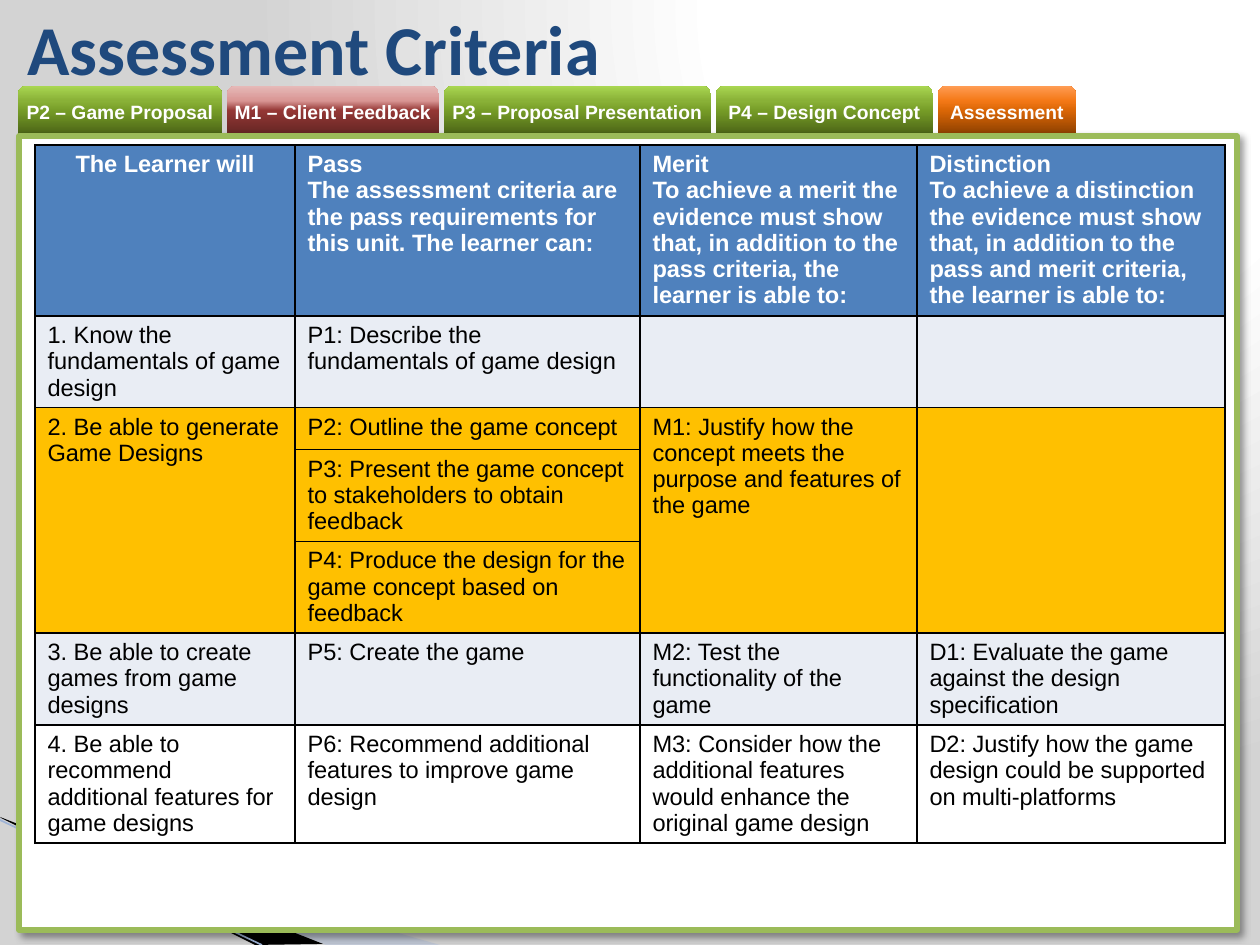
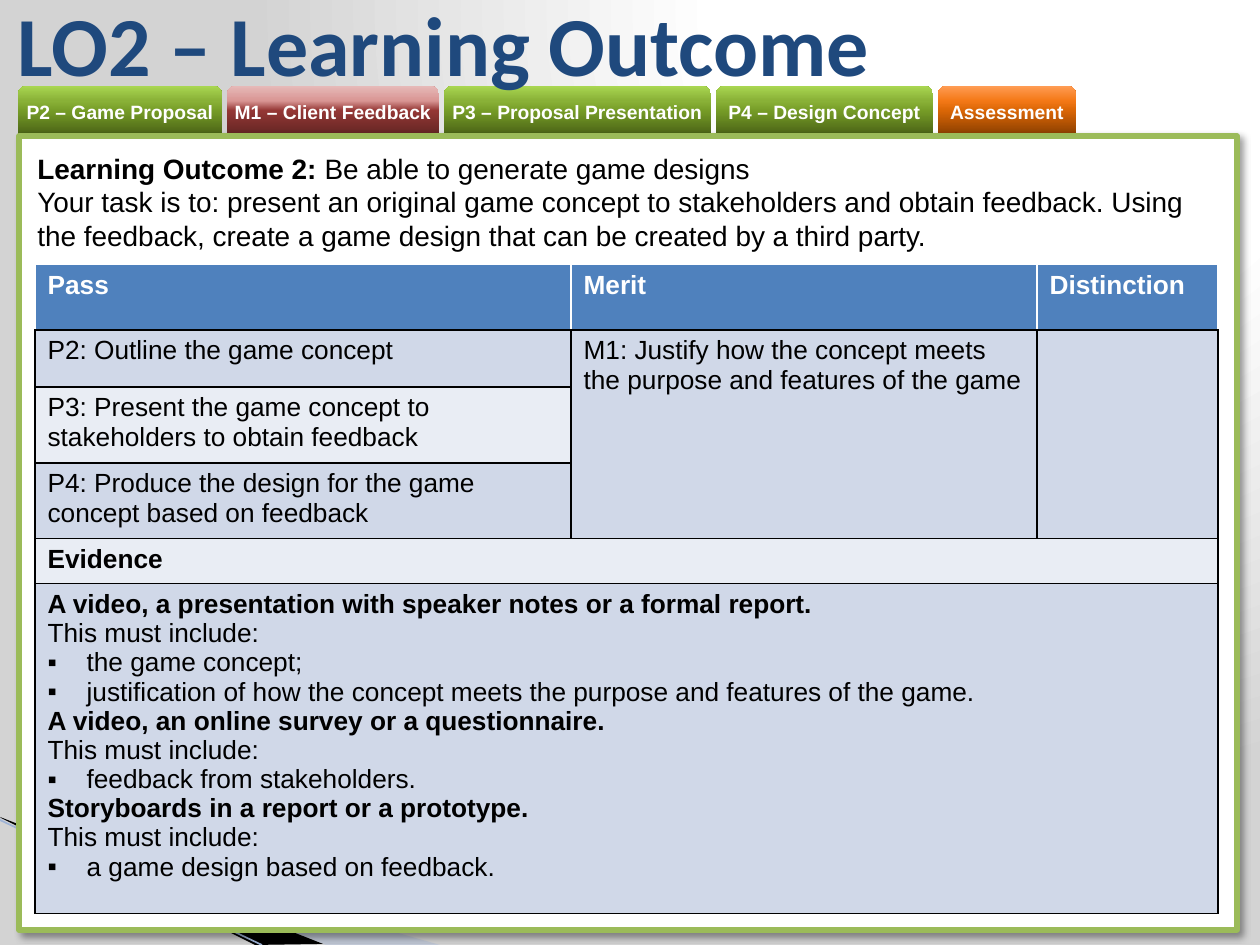
"""Builds the assessment criteria and learning outcome slides for LO2."""
from lxml import etree
from pptx import Presentation
from pptx import util as u
from pptx.dml.color import RGBColor
from pptx.enum import shapes, text
from pptx.oxml.ns import qn

COLOURS = {
    "white": "FFFFFF", "black": "000000", "title": "1F497D", "backdrop": "D3D3D3",
    "header": "4F81BD", "band": "D0D8E8", "pale": "E9EDF4", "current": "FFC000",
    "frame": "9BBB59", "wedge": "A7B9DB", "streak": "9EB3D6",
}
TAB_GRADIENTS = {
    "pass": ["4A6316", "769C27", "89B137", "A9D651"],
    "merit": ["632523", "953735", "D99694", "E6B9B8"],
    "assessment": ["8B3F00", "DA6606", "F47917", "FF9C54"],
}
TAB_STOPS = [0, 50, 70, 100]
TABS = [
    ("P2 – Game Proposal", 204, "pass"),
    ("M1 – Client Feedback", 212, "merit"),
    ("P3 – Proposal Presentation", 267, "pass"),
    ("P4 – Design Concept", 217, "pass"),
    ("Assessment", 138, "assessment"),
]
TAB_LEFT, TAB_TOP, TAB_HEIGHT, TAB_GAP = 18, 86, 49, 5
PANEL = (19, 136, 1218, 794)
WEDGES = [
    ("wedge", 40, [(0, 819), (440, 945), (326, 945), (0, 818)]),
    ("black", 100, [(0, 817), (323, 944), (255, 945), (1, 818)]),
]
STREAK = (0, 820, 262, 945)

INTRO = [
    [("Learning Outcome 2: ", True), ("Be able to generate game designs", False)],
    [("Your task is to: present an original game concept to stakeholders and obtain "
      "feedback. Using the feedback, create a game design that can be created by a "
      "third party.", False)],
]
INTRO_BOX = (25, 145, 1192, 115)
DELIVERABLES = [
    ("A video, a presentation with speaker notes or a formal report.",
     ["the game concept;",
      "justification of how the concept meets the purpose and features of the game."]),
    ("A video, an online survey or a questionnaire.", ["feedback from stakeholders."]),
    ("Storyboards in a report or a prototype.", ["a game design based on feedback."]),
]
EVIDENCE = [
    line for product, items in DELIVERABLES
    for line in [(product, "bold"), ("This must include:", "plain"),
                 *((item, "bullet") for item in items)]
]
P2 = "P2: Outline the game concept"
P3 = "P3: Present the game concept to stakeholders to obtain feedback"
P4 = "P4: Produce the design for the game concept based on feedback"
M1 = "M1: Justify how the concept meets the purpose and features of the game"

CRITERIA = {
    "at": (35, 145), "size": 13.5, "header_edge": "black", "centred": "The Learner will",
    "columns": [260, 345, 277, 308],
    "heights": [171, 91, 42, 92, 91, 92, 118],
    "fills": ["header", "pale", "current", "current", "current", "pale", "white"],
    "spans": [(2, 0, 4, 0), (2, 2, 4, 2), (2, 3, 4, 3)],
    "rows": [
        ["The Learner will",
         "Pass\nThe assessment criteria are the pass requirements for this unit. "
         "The learner can:",
         "Merit\nTo achieve a merit the evidence must show that, in addition to the "
         "pass criteria, the learner is able to:",
         "Distinction\nTo achieve a distinction the evidence must show that, in addition "
         "to the pass and merit criteria, the learner is able to:"],
        ["1. Know the fundamentals of game design",
         "P1: Describe the fundamentals of game design", "", ""],
        ["2. Be able to generate Game Designs", P2, M1, ""],
        ["", P3, "", ""],
        ["", P4, "", ""],
        ["3. Be able to create games from game designs", "P5: Create the game",
         "M2: Test the functionality of the game",
         "D1: Evaluate the game against the design specification"],
        ["4. Be able to recommend\nadditional features for\ngame designs",
         "P6: Recommend additional features to improve game design",
         "M3: Consider how the additional features would enhance the original game design",
         "D2: Justify how the game design could be supported on multi-platforms"],
    ],
}
OUTCOME = {
    "at": (35, 264), "size": 15, "header_edge": "white", "centred": None,
    "columns": [536, 466, 181],
    "heights": [66, 57, 76, 75, 45, 330],
    "fills": ["header", "band", "pale", "band", "pale", "band"],
    "spans": [(1, 1, 3, 1), (1, 2, 3, 2), (4, 0, 4, 2), (5, 0, 5, 2)],
    "rows": [
        ["Pass", "Merit", "Distinction"],
        [P2, M1, ""],
        [P3, "", ""],
        [P4, "", ""],
        [[("Evidence", "bold")], "", ""],
        [EVIDENCE, "", ""],
    ],
}
SLIDES = [
    {"title": "Assessment Criteria", "title_box": (15, 0, 1062, 96), "title_size": 40,
     "table": CRITERIA},
    {"title": "LO2 – Learning Outcome", "title_box": (5, 0, 1062, 86), "title_size": 48,
     "table": OUTCOME, "intro": INTRO},
]
SCALE = u.Inches(1) / 126


def px(*lengths):
    return [u.Emu(round(length * SCALE)) for length in lengths]


def rgb(name):
    return RGBColor.from_string(COLOURS[name])


def add(parent, tag, **attributes):
    return etree.SubElement(parent, qn(tag), {k: str(v) for k, v in attributes.items()})


def style(run, size, colour, bold, font="Arial"):
    run.font.name, run.font.size, run.font.bold = font, u.Pt(size), bold
    run.font.color.rgb = rgb(colour)


def paint_gradient(fill, owner, stops, colours):
    fill.gradient()
    gradient = next(owner.element.iter(qn("a:gradFill")))
    for child in list(gradient):
        gradient.remove(child)
    stop_list = add(gradient, "a:gsLst")
    for stop, colour in zip(stops, colours):
        add(add(stop_list, "a:gs", pos=stop * 1000), "a:srgbClr", val=colour)
    return gradient


def draw_wedges(slide):
    for colour, opacity, points in WEDGES:
        builder = slide.shapes.build_freeform(*points[0], scale=SCALE)
        builder.add_line_segments(points[1:])
        wedge = builder.convert_to_shape()
        wedge.shadow.inherit = False
        wedge.line.fill.background()
        wedge.fill.solid()
        wedge.fill.fore_color.rgb = rgb(colour)
        if opacity < 100:
            tint = next(wedge.element.spPr.iter(qn("a:srgbClr")))
            add(tint, "a:alpha", val=opacity * 1000)
    streak = slide.shapes.add_connector(shapes.MSO_CONNECTOR.STRAIGHT, *px(*STREAK))
    streak.line.color.rgb = rgb("streak")
    streak.line.width = u.Pt(0.95)
    add(streak.element.spPr, "a:effectLst")


def draw_tabs(slide):
    left = TAB_LEFT
    for label, width, kind in TABS:
        tab = slide.shapes.add_shape(shapes.MSO_SHAPE.ROUND_2_SAME_RECTANGLE,
                                     *px(left, TAB_TOP, width, TAB_HEIGHT))
        tab.shadow.inherit = False
        tab.line.fill.background()
        gradient = paint_gradient(tab.fill, tab, TAB_STOPS, TAB_GRADIENTS[kind])
        add(gradient, "a:lin", ang=270 * 60000, scaled=0)
        frame = tab.text_frame
        frame.margin_left = frame.margin_right = frame.margin_top = frame.margin_bottom = 0
        frame.vertical_anchor = text.MSO_ANCHOR.MIDDLE
        frame.text = label
        frame.paragraphs[0].alignment = text.PP_ALIGN.CENTER
        style(frame.paragraphs[0].runs[0], 11, "white", True)
        left += width + TAB_GAP


def draw_panel(slide):
    panel = slide.shapes.add_shape(shapes.MSO_SHAPE.RECTANGLE, *px(*PANEL))
    panel.fill.solid()
    panel.fill.fore_color.rgb = rgb("white")
    panel.line.color.rgb = rgb("frame")
    panel.line.width = u.Pt(3)
    panel.shadow.inherit = False
    effects = next(panel.element.spPr.iter(qn("a:effectLst")))
    shadow = add(effects, "a:outerShdw", blurRad=u.Pt(4), dist=u.Pt(3), dir=45 * 60000,
                 algn="tl", rotWithShape=0)
    add(add(shadow, "a:srgbClr", val=COLOURS["black"]), "a:alpha", val=40000)


def furnish_layout(layout, slide):
    backdrop = [COLOURS[name] for name in ("white", "white", "backdrop")]
    gradient = paint_gradient(layout.background.fill, layout, [0, 40, 100], backdrop)
    add(add(gradient, "a:path", path="circle"), "a:fillToRect", l=65000, t=0, r=0, b=98000)
    draw_wedges(slide)
    draw_tabs(slide)
    draw_panel(slide)
    for part in list(slide.shapes):
        if not part.is_placeholder:
            layout.shapes.element.append(part.element)


def write_title(slide, content):
    title = slide.shapes.title
    title.left, title.top, title.width, title.height = px(*content["title_box"])
    frame = title.text_frame
    frame.text = content["title"]
    frame.word_wrap = True
    frame.auto_size = text.MSO_AUTO_SIZE.NONE
    frame.vertical_anchor = text.MSO_ANCHOR.MIDDLE
    frame.paragraphs[0].alignment = text.PP_ALIGN.LEFT
    style(frame.paragraphs[0].runs[0], content["title_size"], "title", True, "Calibri")


def write_intro(slide, intro):
    frame = slide.shapes.add_textbox(*px(*INTRO_BOX)).text_frame
    frame.word_wrap = True
    for index, parts in enumerate(intro):
        paragraph = frame.add_paragraph() if index else frame.paragraphs[0]
        for wording, bold in parts:
            run = paragraph.add_run()
            run.text = wording
            style(run, 16, "black", bold)


def edge_cell(cell, edges):
    properties = cell._tc.get_or_add_tcPr()
    for side, colour in edges.items():
        edge = add(properties, f"a:ln{side}", w=u.Pt(1))
        add(add(edge, "a:solidFill"), "a:srgbClr", val=COLOURS[colour])


def write_cell(cell, entry, size, is_header):
    if isinstance(entry, str):
        entry = [(line, "plain") for line in entry.split("\n")]
    cell.text_frame.text = "\n".join(line for line, _ in entry)
    for paragraph, (_, look) in zip(cell.text_frame.paragraphs, entry):
        if look == "bullet":
            properties = paragraph._p.get_or_add_pPr()
            indent = px(39)[0]
            properties.set("marL", str(indent))
            properties.set("indent", str(-indent))
            add(properties, "a:buFont", typeface="Arial")
            add(properties, "a:buChar", char="▪")
        for run in paragraph.runs:
            style(run, size, "white" if is_header else "black", is_header or look == "bold")


def draw_table(slide, content):
    columns, heights = content["columns"], content["heights"]
    box = px(*content["at"], sum(columns), sum(heights))
    table = slide.shapes.add_table(len(heights), len(columns), *box).table
    table.first_row = table.horz_banding = False
    for column, width in zip(table.columns, px(*columns)):
        column.width = width
    for row, height in zip(table.rows, px(*heights)):
        row.height = height
    for r, entries in enumerate(content["rows"]):
        outer = "black" if r else content["header_edge"]
        for c, entry in enumerate(entries):
            cell = table.cell(r, c)
            edge_cell(cell, {"L": outer, "R": outer, "T": outer, "B": "black"})
            cell.fill.solid()
            cell.fill.fore_color.rgb = rgb(content["fills"][r])
            write_cell(cell, entry, content["size"], r == 0)
            if entry == content["centred"]:
                cell.text_frame.paragraphs[0].alignment = text.PP_ALIGN.CENTER
    for top, left, bottom, right in content["spans"]:
        origin = table.cell(top, left)
        origin.merge(table.cell(bottom, right))


def main():
    deck = Presentation()
    deck.slide_width, deck.slide_height = px(1260, 945)
    layout = deck.slide_layouts.get_by_name("Title Only")
    for number, content in enumerate(SLIDES):
        slide = deck.slides.add_slide(layout)
        if number == 0:
            furnish_layout(layout, slide)
        write_title(slide, content)
        if "intro" in content:
            write_intro(slide, content["intro"])
        draw_table(slide, content["table"])
    deck.save("out.pptx")


if __name__ == "__main__":
    main()
